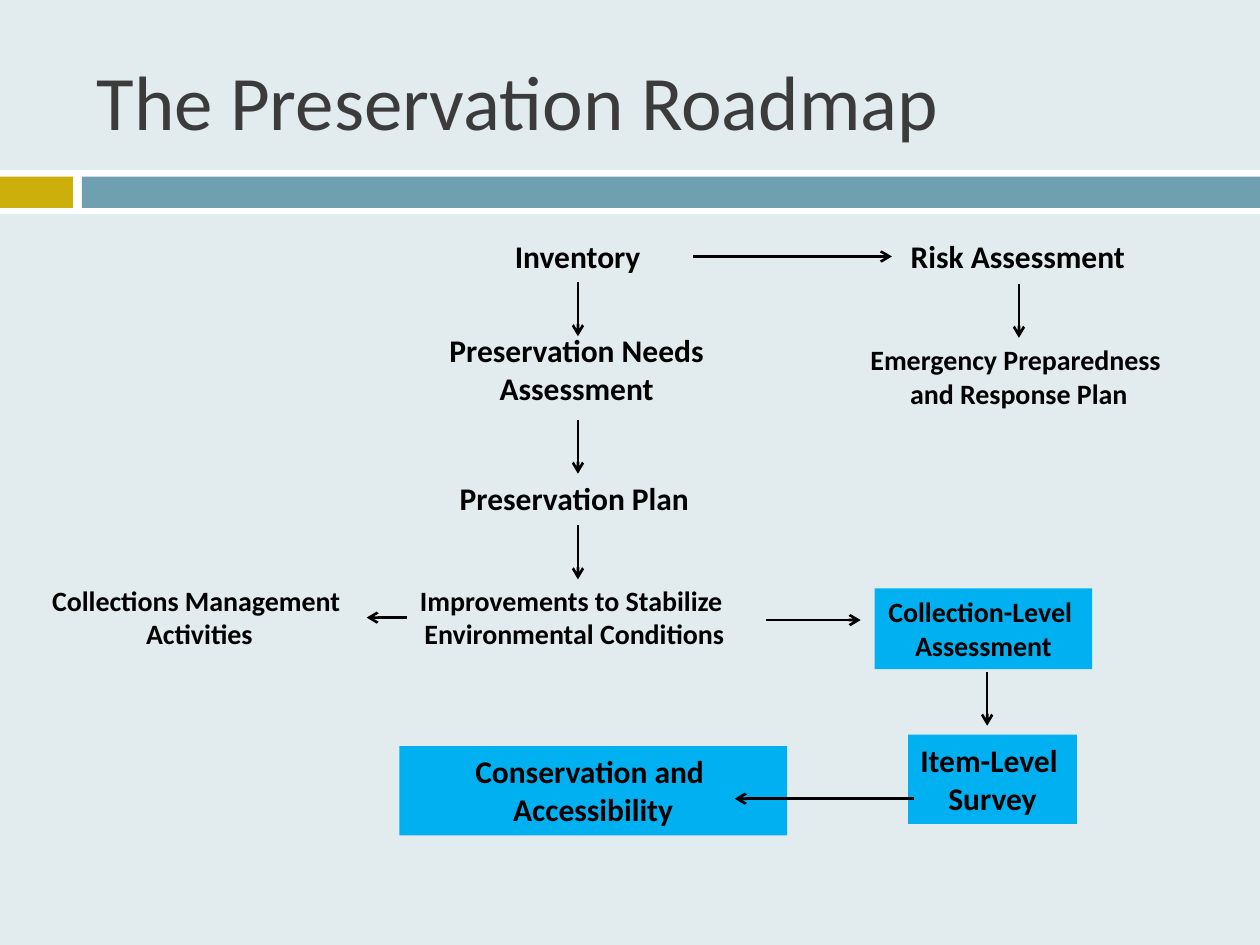
import pptx
import pptx.dml.color
import pptx.enum.shapes
import pptx.enum.text
import pptx.oxml
import pptx.oxml.ns
import pptx.util

Cm, Pt = pptx.util.Cm, pptx.util.Pt
ALIGN = pptx.enum.text.PP_ALIGN
ANCHOR = pptx.enum.text.MSO_ANCHOR
RECTANGLE = pptx.enum.shapes.MSO_SHAPE.RECTANGLE
STRAIGHT = pptx.enum.shapes.MSO_CONNECTOR.STRAIGHT

COLORS = {
    "background": "E2ECEF", "band": "FFFFFF", "gold": "CCAF0A", "teal": "6EA0B0",
    "title": "3B3B3B", "ink": "000000", "highlight": "00B0F0",
}
FONT = "Calibri"
DOWN = 1.09  # length of every downward arrow

# text, left, top, width, height, size, highlighted
STEPS = [
    ("Inventory", 8.68, 0, 4.65, 1.02, 18, False),
    ("Risk Assessment", 17.34, 0, 5.08, 1.02, 18, False),
    ("Emergency Preparedness \nand Response Plan", 16.51, 2.13, 6.78, 1.63, 16, False),
    ("Preservation Needs\nAssessment", 8.05, 1.9, 5.87, 1.8, 18, False),
    ("Preservation Plan", 8.25, 4.88, 5.38, 1.02, 18, False),
    ("Collections Management \nActivities", 0, 6.98, 6.76, 1.63, 16, False),
    ("Improvements to Stabilize \nEnvironmental Conditions", 7.56, 6.98, 6.76, 1.63, 16, False),
    ("Collection-Level \nAssessment", 16.99, 7.21, 4.39, 1.63, 16, True),
    ("Item-Level \nSurvey", 17.67, 10.16, 3.4, 1.8, 18, True),
    ("Conservation and \nAccessibility", 7.41, 10.39, 7.82, 1.8, 18, True),
]
# x, y of the start
DOWN_ARROWS = [(11.01, 1.04), (11.01, 3.81), (11.01, 5.94), (19.9, 1.07), (19.26, 8.89)]
# start x, end x, y
SIDE_ARROWS = [(13.33, 17.34, 0.52), (14.8, 16.71, 7.85), (7.56, 6.75, 7.8), (17.78, 14.17, 11.45)]


def rgb(name):
    return pptx.dml.color.RGBColor.from_string(COLORS[name])


def add_bar(slide, left, top, width, height, color):
    bar = slide.shapes.add_shape(RECTANGLE, Cm(left), Cm(top), Cm(width), Cm(height))
    bar.shadow.inherit = False
    bar.fill.solid()
    bar.fill.fore_color.rgb = rgb(color)
    bar.line.fill.background()
    return bar


def write(holder, text, size, color, bold=False, align=ALIGN.LEFT, anchor=ANCHOR.TOP, wrap=False):
    frame = holder.text_frame
    frame.word_wrap = wrap
    frame.vertical_anchor = anchor
    frame.text = text
    for paragraph in frame.paragraphs:
        paragraph.alignment = align
        for run in paragraph.runs:
            run.font.name = FONT
            run.font.size = Pt(size)
            run.font.bold = bold
            run.font.color.rgb = rgb(color)


def add_arrow(slide, x1, y1, x2, y2):
    arrow = slide.shapes.add_connector(STRAIGHT, Cm(x1), Cm(y1), Cm(x2), Cm(y2))
    arrow.line.width = Pt(1.5)
    arrow.line.color.rgb = rgb("ink")
    head = pptx.oxml.ns.qn("a:tailEnd")
    line = arrow.line._get_or_add_ln()
    line.append(line.makeelement(head, {"type": "arrow"}))
    properties = arrow._element.spPr
    properties.append(properties.makeelement(pptx.oxml.ns.qn("a:effectLst"), {}))


def add_header(slide, left, top, width, height):
    """Title above a white band that holds a gold and a teal bar."""
    band_height, margin, gold_width, teal_left = 0.89, 0.13, 1.47, 1.65
    band_top = top + height - band_height
    bar_top, bar_height = band_top + margin, band_height - 2 * margin
    add_bar(slide, left, band_top, width, band_height, "band")
    add_bar(slide, left, bar_top, gold_width, bar_height, "gold")
    add_bar(slide, left + teal_left, bar_top, width - teal_left, bar_height, "teal")
    title = slide.shapes.add_textbox(Cm(left + 1.7), Cm(top + 0.64), Cm(22.66), Cm(2.74))
    write(title, "The Preservation Roadmap", 44, "title", anchor=ANCHOR.MIDDLE, wrap=True)


def add_roadmap(slide, left, top):
    for text, x, y, width, height, size, highlighted in STEPS:
        if highlighted:
            step = add_bar(slide, left + x, top + y, width, height, "highlight")
        else:
            step = slide.shapes.add_textbox(Cm(left + x), Cm(top + y), Cm(width), Cm(height))
        write(step, text, size, "ink", bold=True, align=ALIGN.CENTER)
    for x, y in DOWN_ARROWS:
        add_arrow(slide, left + x, top + y, left + x, top + y + DOWN)
    for start, end, y in SIDE_ARROWS:
        add_arrow(slide, left + start, top + y, left + end, top + y)


def main():
    deck = pptx.Presentation()
    deck.slide_width, deck.slide_height = Cm(25.4), Cm(19.05)
    slide = deck.slides.add_slide(deck.slide_layouts[6])
    slide.background.fill.solid()
    slide.background.fill.fore_color.rgb = rgb("background")
    add_header(slide, 0, 0, 25.4, 4.32)
    add_roadmap(slide, 0.64, 4.65)
    deck.save("out.pptx")


if __name__ == "__main__":
    main()
